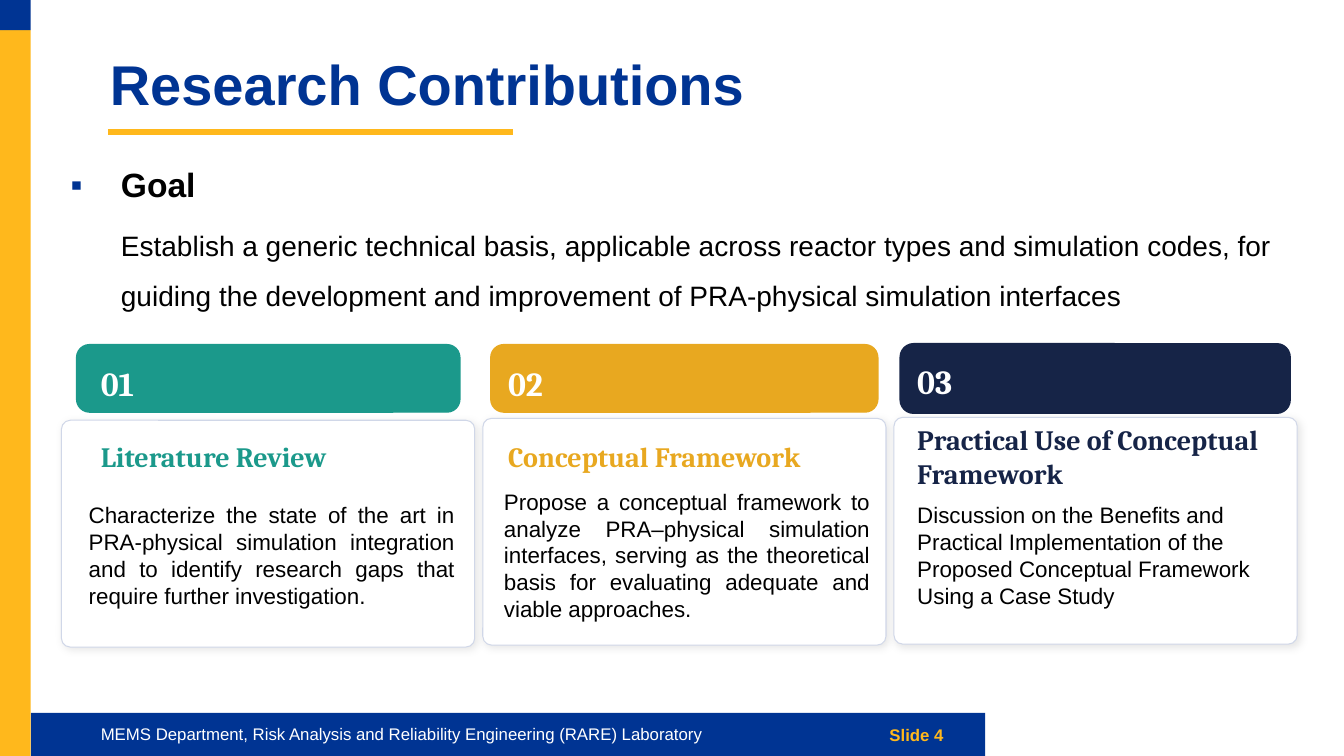
from dataclasses import dataclass

from lxml.etree import SubElement
from pptx import Presentation
from pptx.dml.color import RGBColor
from pptx.enum.shapes import MSO_CONNECTOR, MSO_SHAPE
from pptx.enum.text import MSO_ANCHOR, PP_ALIGN
from pptx.oxml.ns import qn
from pptx.util import Pt

BLUE, GOLD, WHITE, BLACK = "003493", "FFB81C", "FFFFFF", "000000"
CARD_BORDER = "D0D7E8"
CARD_HEIGHT = 162


@dataclass
class Box:
    left: float
    top: float
    width: float
    height: float

    def lengths(self) -> list:
        return [Pt(v) for v in (self.left, self.top, self.width, self.height)]


@dataclass
class Contribution:
    number: str
    heading: str
    description: str
    color: str
    bar: Box
    card: Box
    number_left: float
    number_top: float
    heading_width: float
    description_left: float
    align: PP_ALIGN


CONTRIBUTIONS = [
    Contribution(
        "01", "Literature Review",
        "Characterize the state of the art in PRA-physical simulation integration "
        "and to identify research gaps that require further investigation.",
        "1B998B", Box(54.7, 246.2, 273.8, 48.2), Box(43.9, 300.2, 295.2, CARD_HEIGHT),
        72, 252, 244, 63.4, PP_ALIGN.JUSTIFY),
    Contribution(
        "02", "Conceptual Framework",
        "Propose a conceptual framework to analyze PRA–physical simulation interfaces, "
        "serving as the theoretical basis for evaluating adequate and viable approaches.",
        "E8A820", Box(350.6, 246.2, 276.5, 48.2), Box(344.9, 298.8, 288, CARD_HEIGHT),
        362.9, 252, 263.5, 360, PP_ALIGN.JUSTIFY),
    Contribution(
        "03", "Practical Use of Conceptual Framework",
        "Discussion on the Benefits and Practical Implementation of the "
        "Proposed Conceptual Framework Using a Case Study",
        "162447", Box(643, 245.5, 278.6, 49.7), Box(638.6, 298.1, 288, CARD_HEIGHT),
        655.2, 250.6, 288, 655.2, PP_ALIGN.LEFT),
]


def rgb(value: str) -> RGBColor:
    return RGBColor.from_string(value)


def add_panel(box: Box, fill: str, border: str = "", weight: float = 1,
              corner: float = 0):
    kind = MSO_SHAPE.ROUNDED_RECTANGLE if corner else MSO_SHAPE.RECTANGLE
    panel = slide.shapes.add_shape(kind, *box.lengths())
    panel.shadow.inherit = False
    if corner:
        panel.adjustments[0] = corner
    panel.fill.solid()
    panel.fill.fore_color.rgb = rgb(fill)
    if border:
        panel.line.color.rgb = rgb(border)
        panel.line.width = Pt(weight)
    else:
        panel.line.fill.background()
    return panel


def add_soft_shadow(panel) -> None:
    effects = panel._element.spPr.find(qn("a:effectLst"))
    shadow = SubElement(effects, qn("a:outerShdw"), blurRad=str(Pt(6)),
                        dist=str(Pt(2)), dir="2700000", algn="bl", rotWithShape="0")
    color = SubElement(shadow, qn("a:srgbClr"), val=BLACK)
    SubElement(color, qn("a:alpha"), val="10000")


def add_frame(box: Box, anchor: MSO_ANCHOR = MSO_ANCHOR.MIDDLE,
              side: float = 0, edge: float = 0):
    frame = slide.shapes.add_textbox(*box.lengths()).text_frame
    frame.word_wrap = True
    frame.vertical_anchor = anchor
    frame.margin_left = frame.margin_right = Pt(side)
    frame.margin_top = frame.margin_bottom = Pt(edge)
    return frame


def write(paragraph, text: str, size: float, color: str, bold: bool = False,
          font: str = "Arial", align: PP_ALIGN = PP_ALIGN.LEFT,
          spacing: float = 1) -> None:
    paragraph.alignment = align
    paragraph.line_spacing = spacing
    run = paragraph.add_run()
    run.text = text
    run.font.name = font
    run.font.size = Pt(size)
    run.font.bold = bold
    run.font.color.rgb = rgb(color)


def indent(paragraph, first_line: float, bullet: str = "") -> None:
    props = paragraph._p.get_or_add_pPr()
    props.set("marL", str(Pt(36)))
    props.set("indent", str(Pt(first_line)))
    if bullet:
        SubElement(SubElement(props, qn("a:buClr")), qn("a:srgbClr"), val=BLUE)
        SubElement(props, qn("a:buFont"), typeface="Arial")
        SubElement(props, qn("a:buChar"), char=bullet)


def add_contribution(item: Contribution) -> None:
    add_panel(item.bar, item.color, item.color, corner=0.192)
    add_soft_shadow(add_panel(item.card, WHITE, CARD_BORDER, 0.75, 0.039))
    number = add_frame(Box(item.number_left, item.number_top, 254.2, 43.2))
    write(number.paragraphs[0], item.number, 24, WHITE, True, "Cambria")
    heading = add_frame(Box(item.number_left, 303.8, item.heading_width, 43.9))
    write(heading.paragraphs[0], item.heading, 20, item.color, True, "Cambria")
    description = add_frame(Box(item.description_left, 315.4, 261.4, CARD_HEIGHT))
    write(description.paragraphs[0], item.description, 16, BLACK, align=item.align)


prs = Presentation()
prs.slide_width, prs.slide_height = Pt(960), Pt(540)
slide = prs.slides.add_slide(prs.slide_layouts[6])

# Side band and footer bar
add_panel(Box(22, 509.2, 681.8, 30.8), BLUE)
add_panel(Box(0, 21.6, 22, 518.4), GOLD)
add_panel(Box(0, 0, 22, 21.6), BLUE)

# Title and its underline
title = add_frame(Box(78.5, 37.4, 846.7, 56.2), MSO_ANCHOR.TOP, edge=3.6)
write(title.paragraphs[0], "Research Contributions", 40, BLUE, True, spacing=0.9)
underline = slide.shapes.add_connector(
    MSO_CONNECTOR.STRAIGHT, Pt(77), Pt(94.3), Pt(366.5), Pt(94.3))
underline.line.color.rgb = rgb(GOLD)
underline.line.width = Pt(4)
SubElement(underline._element.spPr, qn("a:effectLst"))

# Goal
goal = add_frame(Box(50.4, 99.4, 887.8, 140), MSO_ANCHOR.TOP, edge=3.6)
goal_label = goal.paragraphs[0]
indent(goal_label, -36, "▪")
write(goal_label, "Goal", 24, BLACK, True, spacing=1.5)
goal_statement = goal.add_paragraph()
indent(goal_statement, 0)
goal_statement.space_before = Pt(5)
write(goal_statement,
      "Establish a generic technical basis, applicable across reactor types and "
      "simulation codes, for guiding the development and improvement of "
      "PRA-physical simulation interfaces", 20, BLACK, spacing=1.5)

# Three contributions
for contribution in CONTRIBUTIONS:
    add_contribution(contribution)

# Footer text
department = add_frame(Box(72, 510.5, 625.7, 29.5))
write(department.paragraphs[0],
      "MEMS Department, Risk Analysis and Reliability Engineering (RARE) Laboratory",
      12, WHITE, spacing=0.9)
slide_number = add_frame(Box(465.1, 510.5, 216, 28.8), side=7.2, edge=3.6)
write(slide_number.paragraphs[0], "Slide 4", 12, GOLD, True, align=PP_ALIGN.RIGHT)

prs.save("out.pptx")
